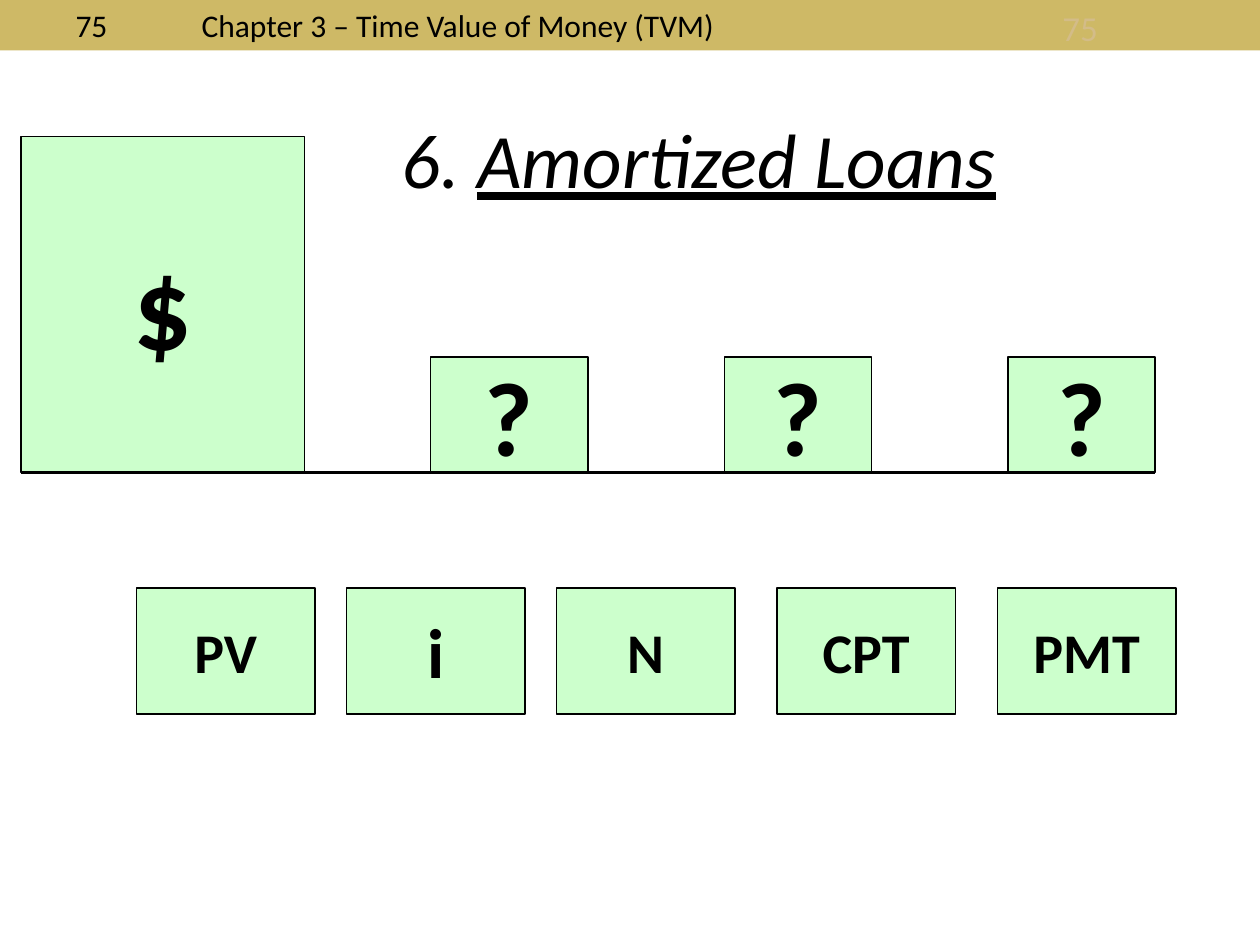
"""Build the amortized loans slide with its cash-flow timeline and calculator keys."""
from lxml import etree
from pptx import Presentation
from pptx.dml.color import RGBColor
from pptx.enum.shapes import MSO_CONNECTOR, MSO_SHAPE
from pptx.enum.text import MSO_ANCHOR, PP_ALIGN
from pptx.oxml.ns import qn
from pptx.util import Pt

RECT = MSO_SHAPE.RECTANGLE
FLOW = MSO_SHAPE.FLOWCHART_PROCESS
LINE = MSO_CONNECTOR.STRAIGHT
MID = MSO_ANCHOR.MIDDLE
LEFT = PP_ALIGN.LEFT
CENTER = PP_ALIGN.CENTER
BLACK = RGBColor(0, 0, 0)
GOLD = RGBColor(0xCE, 0xB9, 0x66)
FAINT = RGBColor(0xD3, 0xBC, 0x88)
GREEN = RGBColor(0xCC, 0xFF, 0xCC)

deck = Presentation()
deck.slide_width, deck.slide_height = Pt(720), Pt(540)
slide = deck.slides.add_slide(deck.slide_layouts[6])
shapes = slide.shapes


def style(para, size, color=BLACK, align=CENTER):
    para.alignment = align
    para.font.name = "Calibri"
    para.font.size = Pt(size)
    para.font.color.rgb = color


def add_box(kind, left, top, width, height, text, size):
    box = shapes.add_shape(kind, Pt(left), Pt(top), Pt(width), Pt(height))
    box.shadow.inherit = False
    box.fill.solid()
    box.fill.fore_color.rgb = GREEN
    box.line.color.rgb = BLACK
    box.line.width = Pt(0.75)
    frame = box.text_frame
    frame.word_wrap = False
    frame.vertical_anchor = MID
    para = frame.paragraphs[0]
    para.text = text
    style(para, size)
    para.font.bold = True


band = shapes.add_shape(RECT, 0, 0, Pt(720), Pt(28.8))
band.shadow.inherit = False
band.fill.solid()
band.fill.fore_color.rgb = GOLD
band.line.fill.background()

for text, left, width, inset, size, color in [
    ("75\tChapter 3 – Time Value of Money (TVM)", 0, 462, 43.2, 18, BLACK),
    ("75", 600, 50, 7.2, 20, FAINT),
]:
    head = shapes.add_textbox(Pt(left), 0, Pt(width), Pt(28.8))
    head.text_frame.word_wrap = True
    head.text_frame.margin_left = Pt(inset)
    para = head.text_frame.paragraphs[0]
    para.add_run().text = text
    style(para, size, color, LEFT)
    if "\t" in text:
        tabs = etree.Element(qn("a:tabLst"))
        etree.SubElement(tabs, qn("a:tab"), pos=str(Pt(72)), algn="l")
        para.font._element.addprevious(tabs)

title = shapes.add_textbox(Pt(216), Pt(60), Pt(366.5), Pt(60.5))
title.text_frame.word_wrap = False
para = title.text_frame.paragraphs[0]
para.add_run().text = "6. "
name = para.add_run()
name.text = "Amortized Loans"
name.font.underline = True
style(para, 44)
para.font.italic = True

BASE = 270
for left, width, height, text, size in [
    (12, 162, 192, "$", 66),
    (246, 90, 66, "?", 60),
    (414, 84, 66, "?", 60),
    (576, 84, 66, "?", 60),
]:
    add_box(FLOW, left, BASE - height, width, height, text, size)

axis = shapes.add_connector(LINE, Pt(12), Pt(BASE), Pt(660), Pt(BASE))
axis.line.color.rgb = BLACK
axis.line.width = Pt(2.25)
etree.SubElement(axis._element.spPr, qn("a:effectLst"))

for left, key, size in [
    (78, "PV", 32),
    (198, "i", 40),
    (318, "N", 32),
    (444, "CPT", 32),
    (570, "PMT", 32),
]:
    add_box(RECT, left, 336, 102, 72, key, size)

deck.save("out.pptx")
